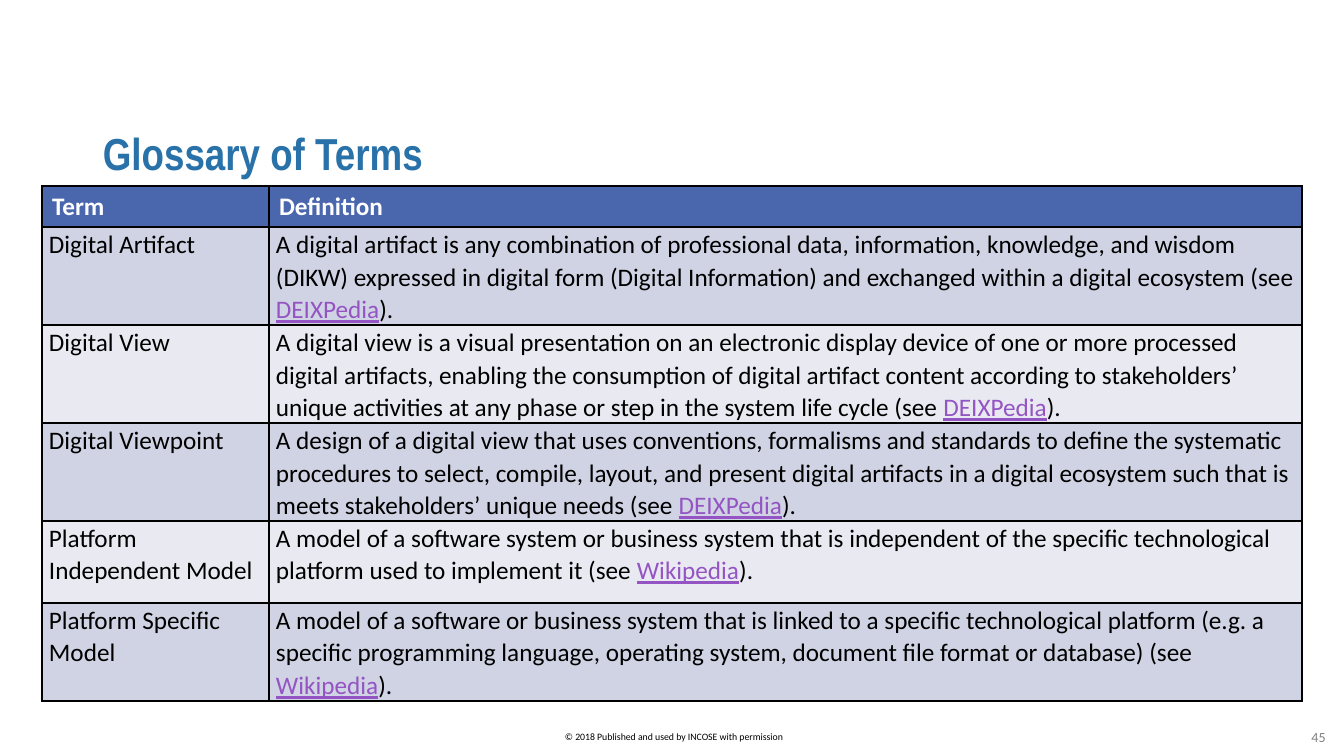
import pptx
import pptx.util
import pptx.dml.color
import pptx.enum.text
import pptx.oxml

PX = 914400 / 100.8
ALIGN = pptx.enum.text.PP_ALIGN
ANCHOR = pptx.enum.text.MSO_ANCHOR


def px(length):
    return pptx.util.Emu(round(length * PX))


def color(hex_code):
    return pptx.dml.color.RGBColor.from_string(hex_code)


deck = pptx.Presentation()
deck.slide_width = px(1344)
deck.slide_height = px(756)
slide = deck.slides.add_slide(deck.slide_layouts[6])

labels = [
    ("© 2018 Published and used by INCOSE with permission",
     (485, 726, 378, 22), "Calibri", 7, "000000", False, ALIGN.CENTER, ANCHOR.TOP),
    ("Glossary of Terms",
     (93, 118, 1176, 76), "Arial Narrow", 32, "2971A9", True, ALIGN.LEFT, ANCHOR.MIDDLE),
    ("45",
     (1293, 717, 51, 40), "Calibri", 10, "808080", False, ALIGN.CENTER, ANCHOR.MIDDLE),
]
for text, place, font_name, size, ink, bold, align, anchor in labels:
    frame = slide.shapes.add_textbox(*map(px, place)).text_frame
    frame.word_wrap = True
    frame.vertical_anchor = anchor
    line = frame.paragraphs[0]
    line.text = text
    line.alignment = align
    line.line_spacing = 0.9 if bold else 1.0
    font = line.runs[0].font
    font.name = font_name
    font.size = pptx.util.Pt(size)
    font.bold = bold
    font.color.rgb = color(ink)

entries = [
    ("Digital Artifact",
     "A digital artifact is any combination of professional data, information, knowledge, "
     "and wisdom (DIKW) expressed in digital form (Digital Information) and exchanged "
     "within a digital ecosystem", "DEIXPedia", 98),
    ("Digital View",
     "A digital view is a visual presentation on an electronic display device of one or more "
     "processed digital artifacts, enabling the consumption of digital artifact content "
     "according to stakeholders’ unique activities at any phase or step in the system "
     "life cycle", "DEIXPedia", 98),
    ("Digital Viewpoint",
     "A design of a digital view that uses conventions, formalisms and standards to define "
     "the systematic procedures to select, compile, layout, and present digital artifacts "
     "in a digital ecosystem such that is meets stakeholders’ unique needs",
     "DEIXPedia", 98),
    ("Platform Independent Model",
     "A model of a software system or business system that is independent of the specific "
     "technological platform used to implement it", "Wikipedia", 82),
    ("Platform Specific Model",
     "A model of a software or business system that is linked to a specific technological "
     "platform (e.g. a specific programming language, operating system, document file "
     "format or database)", "Wikipedia", 98),
]
rows = [(41, [["Term"], ["Definition"]])]
for term, definition, reference, height in entries:
    rows.append((height, [[term], [f"{definition} (see ", reference, ")."]]))

glossary = slide.shapes.add_table(
    len(rows), 2, px(42), px(186), px(1260), px(sum(height for height, _ in rows))).table
glossary.columns[0].width = px(227)
glossary.columns[1].width = px(1033)

for row_index, (height, contents) in enumerate(rows):
    glossary.rows[row_index].height = px(height)
    is_header = row_index == 0
    row_fill = "4A66AC" if is_header else ("E9EAF1", "D0D3E3")[row_index % 2]
    for column_index, pieces in enumerate(contents):
        cell = glossary.cell(row_index, column_index)
        cell.fill.solid()
        cell.fill.fore_color.rgb = color(row_fill)
        if not is_header:
            cell.margin_left = cell.margin_right = px(7)
            cell.margin_top = cell.margin_bottom = 0
        line = cell.text_frame.paragraphs[0]
        line.line_spacing = 1.0 if is_header else 1.07
        for piece_index, piece in enumerate(pieces):
            is_reference = piece_index == 1
            run = line.add_run()
            run.text = piece
            run.font.name = "Calibri"
            run.font.size = pptx.util.Pt(18)
            run.font.bold = is_header
            run.font.underline = is_reference
            ink = "FFFFFF" if is_header else "9454C3" if is_reference else "000000"
            run.font.color.rgb = color(ink)
        properties = cell._tc.get_or_add_tcPr()
        for position, side in enumerate(("lnL", "lnR", "lnT", "lnB")):
            properties.insert(position, pptx.oxml.parse_xml(
                f'<a:{side} xmlns:a="http://schemas.openxmlformats.org/drawingml/2006/main" '
                f'w="{pptx.util.Pt(1)}"><a:solidFill><a:srgbClr val="000000"/></a:solidFill>'
                f'</a:{side}>'))

deck.save("out.pptx")
